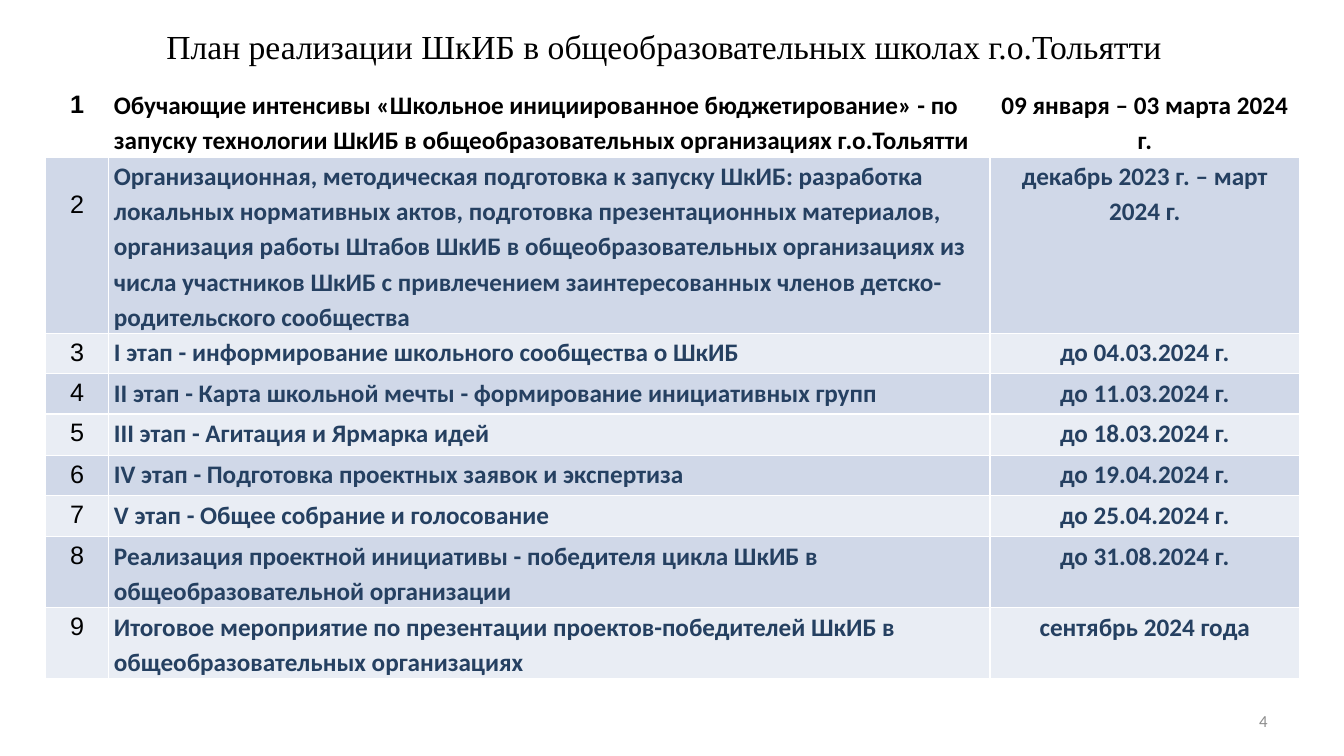
from typing import NamedTuple

from lxml.etree import SubElement
from pptx import Presentation
from pptx.dml.color import RGBColor
from pptx.enum.text import MSO_ANCHOR, MSO_AUTO_SIZE, PP_ALIGN
from pptx.oxml.ns import qn
from pptx.util import Inches, Pt

BLACK, NAVY, GRAY, WHITE = "000000", "254061", "8C8C8C", "FFFFFF"
BANDS = ("E9EDF4", "D0D8E8")
COLUMN_WIDTHS = (0.63, 8.74, 3.07)


class Stage(NamedTuple):
    task: str
    date: str
    height: float
    number_top: float = 0.05


STAGES = (
    Stage("Обучающие интенсивы «Школьное инициированное бюджетирование» - по запуску технологии ШкИБ "
          "в общеобразовательных организациях г.о.Тольятти", "09 января – 03 марта 2024 г.", 0.7),
    Stage("Организационная, методическая подготовка к запуску ШкИБ: разработка локальных нормативных актов, "
          "подготовка презентационных материалов, организация работы Штабов ШкИБ в общеобразовательных "
          "организациях из числа участников ШкИБ с привлечением заинтересованных членов "
          "детско-родительского сообщества", "декабрь 2023 г. – март 2024 г.", 1.71, 0.34),
    Stage("I этап - информирование школьного сообщества о ШкИБ", "до 04.03.2024 г.", 0.4),
    Stage("II этап - Карта школьной мечты - формирование инициативных групп", "до 11.03.2024 г.", 0.4),
    Stage("III этап - Агитация и Ярмарка идей", "до 18.03.2024 г.", 0.41),
    Stage("IV этап - Подготовка проектных заявок и экспертиза", "до 19.04.2024 г.", 0.4),
    Stage("V этап - Общее собрание и голосование", "до 25.04.2024 г.", 0.41),
    Stage("Реализация проектной инициативы - победителя цикла ШкИБ в общеобразовательной организации",
          "до 31.08.2024 г.", 0.68),
    Stage("Итоговое мероприятие по презентации проектов-победителей ШкИБ в общеобразовательных организациях",
          "сентябрь 2024 года", 0.7),
)


def rgb(color: str) -> RGBColor:
    return RGBColor.from_string(color)


def write(frame, text: str, *, size: float = 18, font: str = "Calibri", color: str = BLACK,
          bold: bool = False, align=PP_ALIGN.LEFT, spacing: float = 1.0) -> None:
    frame.word_wrap = True
    paragraph = frame.paragraphs[0]
    paragraph.alignment = align
    paragraph.line_spacing = spacing
    run = paragraph.add_run()
    run.text = text
    run.font.size, run.font.name, run.font.bold = Pt(size), font, bold
    run.font.color.rgb = rgb(color)


def style_cell(cell, fill: str, bottom_width: float, margins: tuple[float, float]) -> None:
    """Set borders, fill and the side and top margins of a cell."""
    side, top = margins
    cell.margin_left = cell.margin_right = Inches(side)
    cell.margin_top = Inches(top)
    cell.margin_bottom = Inches(0.05 if top else 0)
    properties = cell._tc.get_or_add_tcPr()
    for edge in "LRTB":
        width = bottom_width if edge == "B" else 1
        line = SubElement(properties, qn(f"a:ln{edge}"), w=str(Pt(width)))
        SubElement(SubElement(line, qn("a:solidFill")), qn("a:srgbClr"), val=WHITE)
    cell.fill.solid()
    cell.fill.fore_color.rgb = rgb(fill)


def add_plan(slide) -> None:
    height = sum(stage.height for stage in STAGES)
    table = slide.shapes.add_table(len(STAGES), len(COLUMN_WIDTHS), Inches(0.45), Inches(0.85),
                                   Inches(sum(COLUMN_WIDTHS)), Inches(height)).table
    for column, width in zip(table.columns, COLUMN_WIDTHS):
        column.width = Inches(width)
    for index, stage in enumerate(STAGES):
        table.rows[index].height = Inches(stage.height)
        first = index == 0
        fill = WHITE if first else BANDS[index % 2]
        color = BLACK if first else NAVY
        number, task, date = table.rows[index].cells
        for cell in (number, task, date):
            margins = (0.1, stage.number_top) if cell is number else (0.05, 0)
            style_cell(cell, fill, 3 if first else 1, margins)
        write(number.text_frame, str(index + 1), font="Arial", bold=first, align=PP_ALIGN.CENTER)
        write(task.text_frame, stage.task, color=color, bold=True, spacing=1.15)
        write(date.text_frame, stage.date, color=color, bold=True, align=PP_ALIGN.CENTER, spacing=1.15)


def main() -> None:
    presentation = Presentation()
    presentation.slide_width, presentation.slide_height = Inches(13.33), Inches(7.5)
    slide = presentation.slides.add_slide(presentation.slide_layouts[5])

    title = slide.shapes.title
    title.left, title.top, title.width, title.height = map(Inches, (1.55, 0.21, 10.55, 0.5))
    title.text_frame.auto_size = MSO_AUTO_SIZE.NONE
    title.text_frame.vertical_anchor = MSO_ANCHOR.TOP
    write(title.text_frame, "План реализации ШкИБ в общеобразовательных школах г.о.Тольятти",
          size=24, font="Times New Roman")

    add_plan(slide)

    page_number = slide.shapes.add_textbox(*map(Inches, (9.56, 6.95, 3.11, 0.4)))
    page_number.text_frame.vertical_anchor = MSO_ANCHOR.MIDDLE
    write(page_number.text_frame, "4", size=12, color=GRAY, align=PP_ALIGN.RIGHT)

    presentation.save("out.pptx")


if __name__ == "__main__":
    main()
